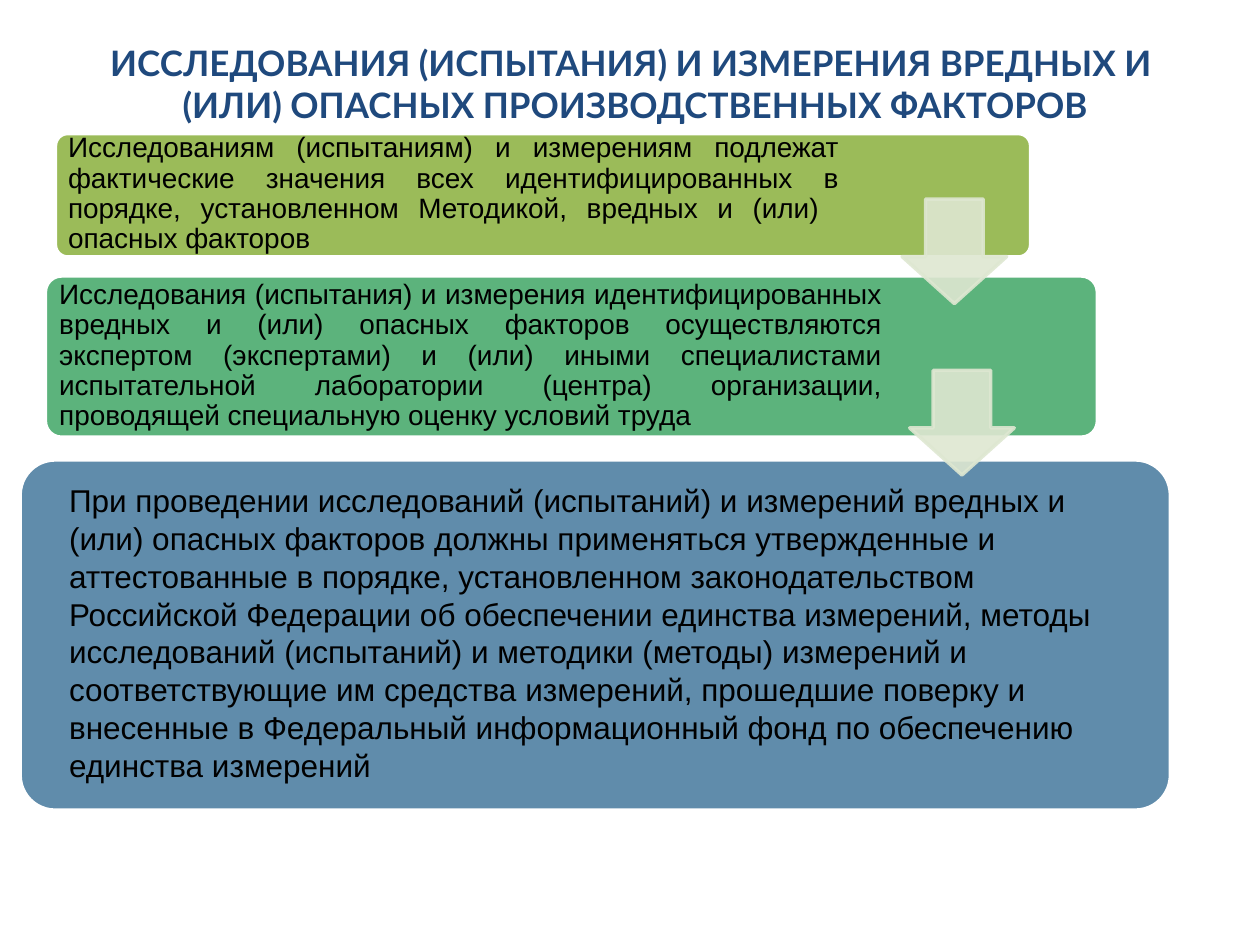
"""Build a slide on testing and measuring harmful and hazardous work factors."""
from lxml.etree import SubElement
from pptx import Presentation
from pptx.dml.color import RGBColor
from pptx.enum.shapes import MSO_SHAPE as SHAPE
from pptx.enum.text import MSO_ANCHOR as ANCHOR, PP_ALIGN as ALIGN
from pptx.oxml.ns import qn
from pptx.util import Inches, Pt

COLORS = {"title": "1F497D", "text": "000000", "line": "FFFFFF", "green": "9BBB59",
          "teal": "5CB37C", "blue": "608CAB", "arrow": "DEE7D1"}


def add_block(kind, box, adjustments, fill, line):
    sp = s.shapes.add_shape(kind, *map(Inches, box))
    sp.shadow.inherit = False
    for i, value in enumerate(adjustments):
        sp.adjustments[i] = value
    sp.fill.solid()
    sp.fill.fore_color.rgb = RGBColor.from_string(COLORS[fill])
    sp.line.color.rgb = RGBColor.from_string(COLORS[line])
    sp.line.width = Pt(2)
    return sp


def add_text(box, text, size, font, color, align, anchor, margins):
    tf = s.shapes.add_textbox(*map(Inches, box)).text_frame
    tf.word_wrap = True
    tf.vertical_anchor = anchor
    tf.margin_left = tf.margin_right = Inches(margins[0])
    tf.margin_top = tf.margin_bottom = Inches(margins[1])
    p = tf.paragraphs[0]
    p.text = text
    p.alignment = align
    p.font.size = Pt(size)
    p.font.name = font
    p.font.color.rgb = RGBColor.from_string(COLORS[color])
    return p


prs = Presentation()
prs.slide_width, prs.slide_height = Inches(10), Inches(7.5)
s = prs.slides.add_slide(prs.slide_layouts[6])

title = add_text((0.51, 0.28, 9, 0.77),
                 "ИССЛЕДОВАНИЯ (ИСПЫТАНИЯ) И ИЗМЕРЕНИЯ ВРЕДНЫХ И\v"
                 " (ИЛИ) ОПАСНЫХ ПРОИЗВОДСТВЕННЫХ ФАКТОРОВ",
                 20, "Lato", "title", ALIGN.CENTER, ANCHOR.MIDDLE, (0, 0))
title.font.bold = True

steps = [
    ((0.44, 1.06, 7.74, 0.98), "green", (0.47, 1.08, 6.26, 0.92),
     "Исследованиям (испытаниям) и измерениям подлежат фактические значения всех "
     "идентифицированных в порядке, установленном Методикой, вредных и (или)  "
     "опасных факторов"),
    ((0.36, 2.19, 8.35, 1.28), "teal", (0.4, 2.22, 6.67, 1.21),
     "Исследования (испытания) и измерения идентифицированных вредных и (или) "
     "опасных факторов осуществляются экспертом (экспертами) и (или) иными "
     "специалистами испытательной лаборатории (центра) организации, проводящей "
     "специальную оценку условий труда"),
]
for box, fill, text_box, text in steps:
    add_block(SHAPE.ROUNDED_RECTANGLE, box, [0.1], fill, "line")
    p = add_text(text_box, text, 16, "Arial", "text", ALIGN.JUSTIFY, ANCHOR.MIDDLE,
                 (0.07, 0.07))
    p.line_spacing = 0.9

add_block(SHAPE.ROUNDED_RECTANGLE, (0.16, 3.65, 9.13, 2.78), [0.1], "blue", "line")

for left, top in [(7.22, 2.94), (7.16, 1.58)]:
    arrow = add_block(SHAPE.DOWN_ARROW, (left, top, 0.83, 0.83), [0.55, 0.45],
                      "arrow", "arrow")
    for color in arrow._element.spPr.iter(qn("a:srgbClr")):
        SubElement(color, qn("a:alpha")).set("val", "90000")

add_text((0.45, 3.77, 8.5, 2.52),
         "При проведении исследований (испытаний) и измерений вредных и (или) опасных "
         "факторов должны применяться утвержденные и аттестованные в порядке, "
         "установленном законодательством Российской Федерации об обеспечении единства "
         "измерений, методы исследований (испытаний) и методики (методы) измерений и "
         "соответствующие им средства измерений, прошедшие поверку и внесенные в "
         "Федеральный информационный фонд по обеспечению единства измерений",
         18, "Arial", "text", ALIGN.LEFT, ANCHOR.TOP, (0.1, 0.05))

prs.save("out.pptx")
